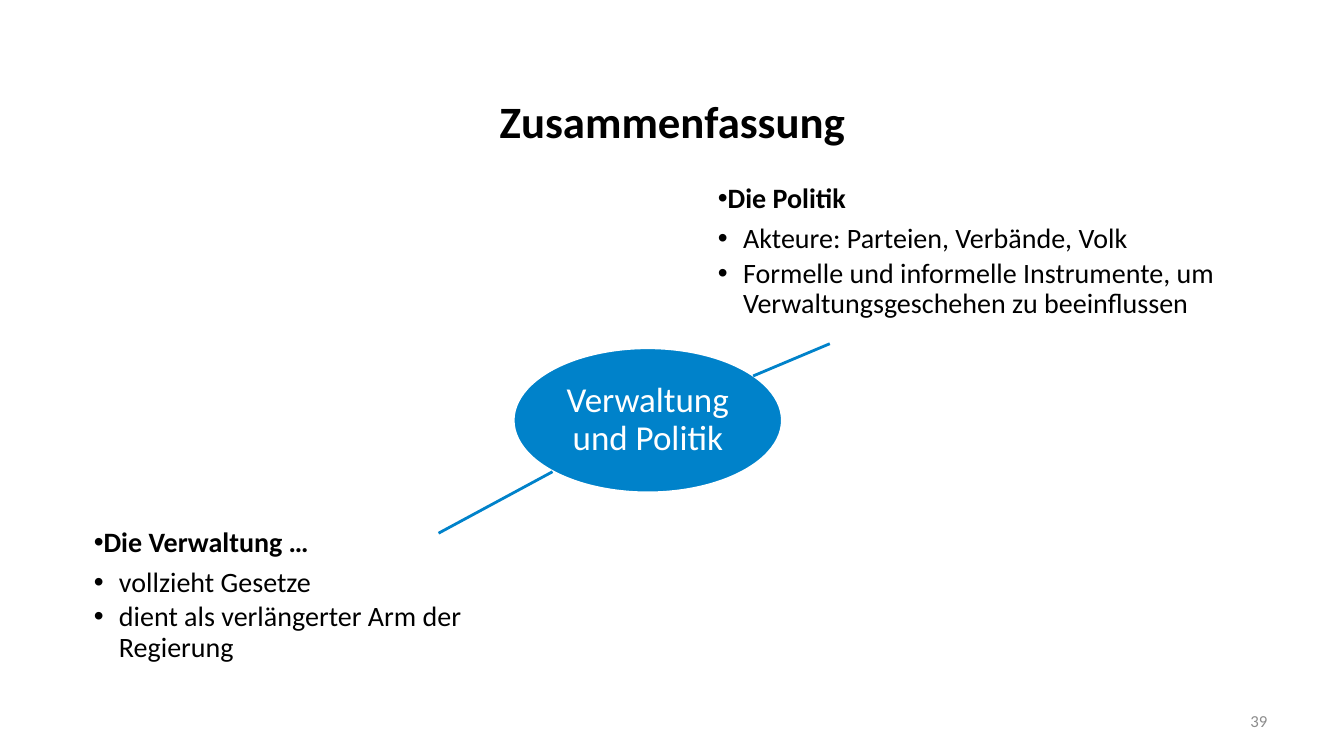
from lxml import etree
from pptx import Presentation
from pptx.dml.color import RGBColor
from pptx.enum import shapes, text
from pptx.oxml.ns import qn
from pptx.util import Inches, Pt

# Content
TITLE = "Zusammenfassung"
HUB = "Verwaltung und Politik"
PAGE_NUMBER = "39"
TOPICS = [
    {"heading": "Die Politik",
     "points": ["Akteure: Parteien, Verbände, Volk",
                "Formelle und informelle Instrumente, um "
                "Verwaltungsgeschehen zu beeinflussen"],
     "place": (7.11, 1.78, 5.07, 1.44),
     "link": (7.47, 3.73, 8.23, 3.41)},
    {"heading": "Die Verwaltung …",
     "points": ["vollzieht Gesetze",
                "dient als verlängerter Arm der Regierung"],
     "place": (0.92, 5.19, 4.56, 1.44),
     "link": (5.48, 4.68, 4.35, 5.29)},
]
COLORS = {"ink": "000000", "blue": "0082CA", "white": "FFFFFF", "grey": "8C8C8C"}
FONT = "Calibri"


def color(name):
    return RGBColor.from_string(COLORS[name])


def place(shape, box):
    shape.left, shape.top, shape.width, shape.height = map(Inches, box)


def set_frame(frame, margin):
    frame.word_wrap = True
    frame.auto_size = text.MSO_AUTO_SIZE.NONE
    frame.vertical_anchor = text.MSO_ANCHOR.MIDDLE
    frame.margin_left = frame.margin_right = Inches(margin)
    frame.margin_top = frame.margin_bottom = Inches(margin)


def write(para, words, size, ink, align, bold=False):
    para.alignment = align
    span = para.add_run()
    span.text = words
    span.font.name, span.font.size, span.font.bold = FONT, Pt(size), bold
    span.font.color.rgb = color(ink)


def add_bullet(para, indent):
    properties = para._p.get_or_add_pPr()
    properties.set("marL", str(Inches(indent)))
    properties.set("indent", str(-Inches(indent)))
    etree.SubElement(properties, qn("a:buChar")).set("char", "•")


def write_topic(frame, topic):
    set_frame(frame, 0.01)
    lines = [(topic["heading"], 0)] + [(point, 1) for point in topic["points"]]
    for index, (words, level) in enumerate(lines):
        para = frame.add_paragraph() if index else frame.paragraphs[0]
        para.level = level
        para.line_spacing = 0.9
        para.space_before = Pt(0)
        para.space_after = Pt(3 if level else 7)
        write(para, words, 20, "ink", text.PP_ALIGN.LEFT, bold=level == 0)
        add_bullet(para, 0.25 * level)


def add_link(page, ends):
    link = page.shapes.add_connector(shapes.MSO_CONNECTOR.STRAIGHT,
                                     *map(Inches, ends))
    link.line.color.rgb = color("blue")
    link.line.width = Pt(2)
    etree.SubElement(link._element.spPr, qn("a:effectLst"))


def main():
    deck = Presentation()
    deck.slide_width, deck.slide_height = Inches(13.33), Inches(7.5)
    page = deck.slides.add_slide(deck.slide_layouts.get_by_name("Two Content"))

    # Title
    title = page.shapes.title
    place(title, (0.67, 0.84, 12, 0.71))
    set_frame(title.text_frame, 0.05)
    write(title.text_frame.paragraphs[0], TITLE, 32, "ink",
          text.PP_ALIGN.CENTER, bold=True)

    # Central ellipse
    hub = page.shapes.add_shape(shapes.MSO_SHAPE.OVAL, *map(
        Inches, (5.09, 3.45, 2.67, 1.44)))
    hub.shadow.inherit = False
    hub.fill.solid()
    hub.fill.fore_color.rgb = color("blue")
    hub.line.color.rgb = color("white")
    hub.line.width = Pt(2)
    set_frame(hub.text_frame, 0.02)
    para = hub.text_frame.paragraphs[0]
    para.line_spacing = 0.9
    write(para, HUB, 25, "white", text.PP_ALIGN.CENTER)

    # Topic lists with their links to the ellipse
    for body, topic in zip(list(page.placeholders)[1:], TOPICS):
        place(body, topic["place"])
        write_topic(body.text_frame, topic)
        add_link(page, topic["link"])

    # Page number
    number = page.shapes.add_textbox(*map(Inches, (9.56, 6.95, 3.11, 0.4)))
    set_frame(number.text_frame, 0.1)
    write(number.text_frame.paragraphs[0], PAGE_NUMBER, 12, "grey",
          text.PP_ALIGN.RIGHT)

    deck.save("out.pptx")


if __name__ == "__main__":
    main()
